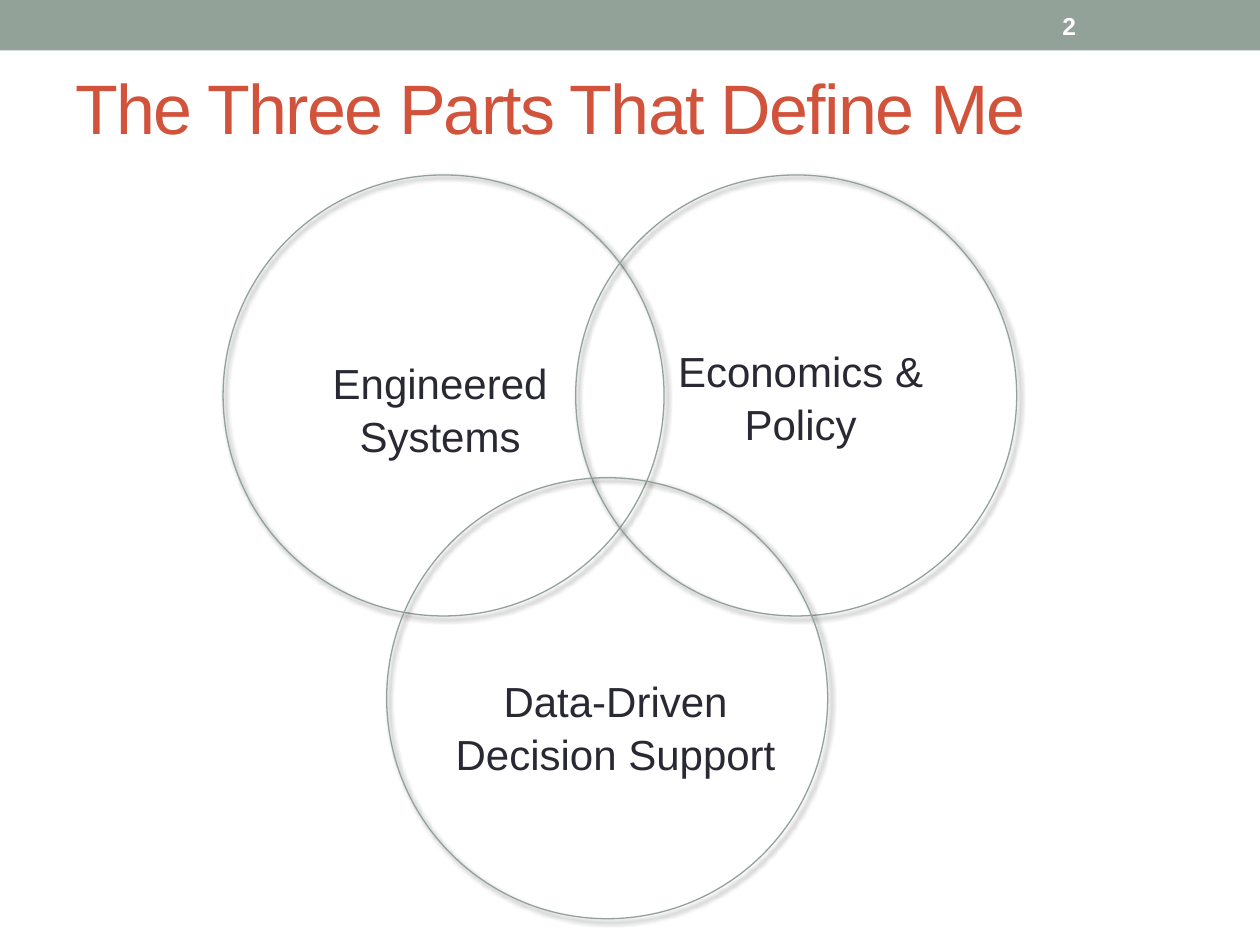
"""Builds a slide with three overlapping circles under a title."""
from lxml import etree
from pptx import Presentation
from pptx.dml.color import RGBColor
from pptx.enum.shapes import MSO_SHAPE
from pptx.enum.text import MSO_ANCHOR, PP_ALIGN
from pptx.oxml.ns import qn
from pptx.util import Pt

RECTANGLE, OVAL = MSO_SHAPE.RECTANGLE, MSO_SHAPE.OVAL
TOP, MIDDLE = MSO_ANCHOR.TOP, MSO_ANCHOR.MIDDLE
LEFT, CENTER = PP_ALIGN.LEFT, PP_ALIGN.CENTER
TITLE_ONLY = 5


def color(value):
    return RGBColor.from_string(value)


def points(*lengths):
    return [Pt(length) for length in lengths]


class SlideBuilder:
    font = "Arial"
    sage = "93A299"
    red = "D2533C"
    ink = "292934"
    white = "FFFFFF"
    diameter = 252

    def __init__(self, presentation):
        self.slide = presentation.slides.add_slide(presentation.slide_layouts[TITLE_ONLY])

    def style(self, paragraph, size, text_color, alignment=LEFT, bold=False):
        paragraph.alignment = alignment
        font = paragraph.font
        font.name, font.size, font.bold = self.font, Pt(size), bold
        font.color.rgb = color(text_color)

    def band(self, box):
        shape = self.slide.shapes.add_shape(RECTANGLE, *points(*box))
        shape.shadow.inherit = False
        shape.fill.solid()
        shape.fill.fore_color.rgb = color(self.sage)
        shape.line.fill.background()

    def title(self, text, box):
        title = self.slide.shapes.title
        title.left, title.top, title.width, title.height = points(*box)
        frame = title.text_frame
        frame.text = text
        frame.vertical_anchor = MIDDLE
        self.style(frame.paragraphs[0], 40, self.red)
        frame.paragraphs[0].runs[0].font._element.set("spc", "-100")

    def number(self, text, box):
        frame = self.slide.shapes.add_textbox(*points(*box)).text_frame
        frame.text = text
        frame.word_wrap = True
        frame.vertical_anchor = MIDDLE
        self.style(frame.paragraphs[0], 14, self.white, bold=True)

    def add_shadow(self, shape):
        shape.shadow.inherit = False
        effects = shape._element.spPr.find(qn("a:effectLst"))
        shadow = etree.SubElement(effects, qn("a:outerShdw"), blurRad=str(Pt(3)),
                                  dist=str(Pt(2)), dir=str(45 * 60000), rotWithShape="0")
        shade = etree.SubElement(shadow, qn("a:srgbClr"), val="000000")
        etree.SubElement(shade, qn("a:alpha"), val="60000")

    def circle(self, left, top, lines, label_box):
        group = self.slide.shapes.add_group_shape()
        circle = group.shapes.add_shape(OVAL, *points(left, top, self.diameter, self.diameter))
        circle.fill.background()
        circle.line.color.rgb = color(self.sage)
        circle.line.width = Pt(0.75)
        self.add_shadow(circle)
        frame = group.shapes.add_textbox(*points(*label_box)).text_frame
        frame.text = "\n".join(lines)
        frame.word_wrap = False
        frame.vertical_anchor = TOP
        for paragraph in frame.paragraphs:
            self.style(paragraph, 24, self.ink, CENTER)
            paragraph.line_spacing = 1.05


def main():
    presentation = Presentation()
    presentation.slide_width, presentation.slide_height = points(720, 540)
    builder = SlideBuilder(presentation)
    builder.band((0, 0, 720, 28.8))
    builder.title("The Three Parts That Define Me", (36, 16, 648, 90))
    builder.number("2", (600, 1.5, 84, 26))
    circles = [
        (127.5, 100, ("Engineered", "Systems"), (182, 199.5, 139, 65.5)),
        (329, 100, ("Economics &", "Policy"), (375, 192.5, 165, 76)),
        (221, 273, ("Data-Driven", "Decision Support"), (252, 381, 199.5, 65.5)),
    ]
    for circle in circles:
        builder.circle(*circle)
    presentation.save("out.pptx")


if __name__ == "__main__":
    main()
